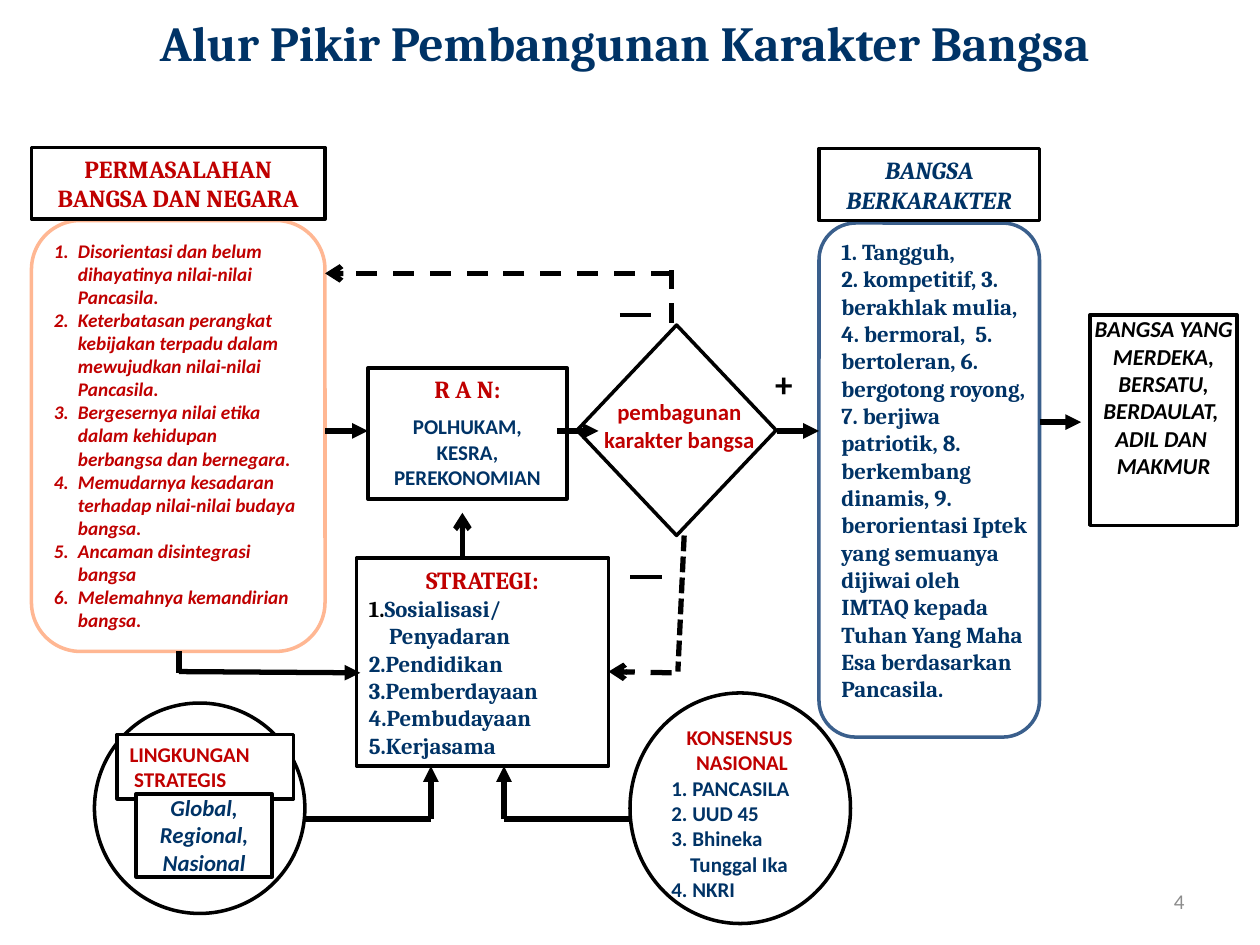
from dataclasses import dataclass, replace

from lxml.etree import SubElement
from pptx import Presentation
from pptx.dml.color import RGBColor
from pptx.enum.dml import MSO_LINE_DASH_STYLE as DASH
from pptx.enum.shapes import MSO_CONNECTOR, MSO_SHAPE as KIND
from pptx.enum.text import MSO_ANCHOR as ANCHOR, PP_ALIGN as ALIGN
from pptx.oxml.ns import qn
from pptx.util import Inches, Pt

NAVY = RGBColor(0x00, 0x33, 0x66)
RED = RGBColor(0xC0, 0x00, 0x00)
BLACK = RGBColor(0x00, 0x00, 0x00)
WHITE = RGBColor(0xFF, 0xFF, 0xFF)
PEACH = RGBColor(0xFF, 0xB7, 0x93)
BLUE = RGBColor(0x3A, 0x5F, 0x8C)
GRAY = RGBColor(0x8C, 0x8C, 0x8C)


@dataclass
class Style:
    """Look of a group of paragraphs."""
    font: str
    size: float
    color: RGBColor
    bold: bool = True
    italic: bool = False
    align: ALIGN = ALIGN.LEFT


HEADING = Style("Cambria", 14, RED, align=ALIGN.CENTER)
TRAITS = Style("Cambria", 13, NAVY)
LABEL = Style("Calibri", 12, RED)
GOAL = Style("Calibri", 13, BLACK, italic=True, align=ALIGN.CENTER)


def format_run(run, style):
    """Apply a style to one run."""
    run.font.name, run.font.size = style.font, Pt(style.size)
    run.font.bold, run.font.italic = style.bold, style.italic
    run.font.color.rgb = style.color


def write(shape, *groups, anchor=ANCHOR.TOP, wrap=True, inset=None):
    """Fill a shape with (style, lines) groups and return the paragraphs."""
    frame = shape.text_frame
    frame.text = "\n".join(line for _, lines in groups for line in lines)
    frame.word_wrap, frame.vertical_anchor = wrap, anchor
    if inset is not None:
        frame.margin_left = frame.margin_right = Inches(inset)
        frame.margin_top = frame.margin_bottom = Inches(inset)
    styles = [style for style, lines in groups for _ in lines]
    for paragraph, style in zip(frame.paragraphs, styles):
        paragraph.alignment = style.align
        for run in paragraph.runs:
            format_run(run, style)
    return frame.paragraphs


def add_outline(slide, box, kind=KIND.RECTANGLE, line=BLACK, fill=WHITE):
    """Add an outlined preset shape."""
    shape = slide.shapes.add_shape(kind, *map(Inches, box))
    shape.shadow.inherit = False
    shape.fill.solid()
    shape.fill.fore_color.rgb = fill
    shape.line.color.rgb, shape.line.width = line, Pt(2)
    return shape


def add_text(slide, box, *groups, **layout):
    """Add a text box holding the given groups."""
    return write(slide.shapes.add_textbox(*map(Inches, box)), *groups, **layout)


def add_line(slide, start, end, head=None, dash=None, width=3):
    """Add a straight black line with an optional arrowhead at its end."""
    line = slide.shapes.add_connector(MSO_CONNECTOR.STRAIGHT, *map(Inches, start + end))
    line.line.color.rgb, line.line.width = BLACK, Pt(width)
    if dash:
        line.line.dash_style = dash
    if head:
        SubElement(line.line._get_or_add_ln(), qn("a:tailEnd"), type=head)
    SubElement(line._element.spPr, qn("a:effectLst"))


def indent(paragraph, left, hanging=0):
    """Indent a paragraph, hanging its first line if asked."""
    properties = paragraph._p.get_or_add_pPr()
    properties.set("marL", str(Inches(left)))
    properties.set("indent", str(-Inches(hanging)))
    return properties


def add_nation(slide, box):
    """Add the traits of a nation with character."""
    x, y, w, h = box
    add_outline(slide, (x, y + 0.59, w, h - 0.59), KIND.ROUNDED_RECTANGLE, BLUE)
    add_text(slide, (x + 0.08, y + 0.53, w - 0.08, 4.04), (TRAITS, [
        "1. Tangguh,",
        "2. kompetitif, 3. berakhlak mulia, 4. bermoral,  5. bertoleran, "
        "6. bergotong royong, 7. berjiwa patriotik, 8. berkembang dinamis, "
        "9. berorientasi Iptek yang semuanya dijiwai oleh  IMTAQ kepada Tuhan "
        "Yang Maha Esa berdasarkan Pancasila."]), anchor=ANCHOR.MIDDLE)
    write(add_outline(slide, (x, y, w, 0.57)),
          (replace(HEADING, color=NAVY, italic=True), ["BANGSA BERKARAKTER"]),
          anchor=ANCHOR.MIDDLE)


def add_problems(slide, box):
    """Add the numbered problems of nation and state."""
    x, y, w, h = box
    add_outline(slide, (x, y + 0.58, w, h - 0.58), KIND.ROUNDED_RECTANGLE, PEACH)
    problems = add_text(
        slide, (x + 0.08, y + 0.57, w - 0.18, h - 0.57),
        (Style("Calibri", 11, RED, italic=True), [
            "Disorientasi dan belum dihayatinya nilai-nilai Pancasila.",
            "Keterbatasan perangkat kebijakan terpadu dalam mewujudkan nilai-nilai Pancasila.",
            "Bergesernya nilai etika dalam kehidupan berbangsa dan bernegara.",
            "Memudarnya kesadaran terhadap nilai-nilai budaya bangsa.",
            "Ancaman disintegrasi bangsa",
            "Melemahnya kemandirian bangsa."]), anchor=ANCHOR.MIDDLE)
    for problem in problems:
        SubElement(indent(problem, 0.19, 0.19), qn("a:buAutoNum"), type="arabicPeriod")
    write(add_outline(slide, (x, y, w, 0.57)), (HEADING, ["PERMASALAHAN BANGSA DAN NEGARA"]))


def add_plan(slide, box):
    """Add the action plan."""
    plan = write(add_outline(slide, box), (HEADING, ["R A N:"]),
                 (replace(LABEL, color=NAVY, align=ALIGN.CENTER),
                  ["POLHUKAM, KESRA, PEREKONOMIAN"]))
    plan[1].space_before = Pt(6)


def add_decision(slide, box):
    """Add the character-building decision and its signs."""
    x, y, w, h = box
    add_outline(slide, box, KIND.FLOWCHART_DECISION)
    add_text(slide, (x + 0.02, y + 0.53, w, 0.76),
             (replace(GOAL, color=RED, italic=False), ["pembagunan karakter bangsa"]))
    add_text(slide, (x + 1.5, y + 0.25, 0.17, 0.44), (Style("Calibri", 20, BLACK), ["+"]))
    for dx, dy in ((0.34, -0.08), (0.42, 2)):
        add_line(slide, (x + dx, y + dy), (x + dx + 0.25, y + dy), width=2.25)


def add_strategy(slide, box):
    """Add the strategy list."""
    strategy = write(add_outline(slide, box), (HEADING, ["STRATEGI:"]), (TRAITS, [
        "1.", "Penyadaran", "2.Pendidikan", "3.Pemberdayaan",
        "4.Pembudayaan", "5.Kerjasama"]), anchor=ANCHOR.MIDDLE)
    strategy[1].runs[0].font.color.rgb = BLACK
    first = strategy[1].add_run()
    first.text = "Sosialisasi/"
    format_run(first, TRAITS)
    indent(strategy[2], 0.16)


def add_consensus(slide, box):
    """Add the national consensus circle."""
    x, y, _, _ = box
    add_outline(slide, box, KIND.OVAL)
    pillars = add_text(slide, (x + 0.23, y + 0.6, 1.36, 1.11), (replace(LABEL, color=NAVY), [
        "1. PANCASILA", "2. UUD 45", "3. Bhineka", "Tunggal Ika", "4. NKRI"]),
        anchor=ANCHOR.MIDDLE)
    indent(pillars[3], 0.15)
    add_text(slide, (x + 0.24, y + 0.2, 1.26, 0.5),
             (replace(LABEL, align=ALIGN.CENTER), ["KONSENSUS", " NASIONAL"]),
             anchor=ANCHOR.MIDDLE, wrap=False)


def add_environment(slide, box):
    """Add the strategic environment circle."""
    x, y, _, _ = box
    add_outline(slide, box, KIND.OVAL)
    write(add_outline(slide, (x + 0.18, y + 0.25, 1.4, 0.51)),
          (LABEL, ["LINGKUNGAN", " STRATEGIS"]), anchor=ANCHOR.MIDDLE)
    write(add_outline(slide, (x + 0.33, y + 0.72, 1.08, 0.66)),
          (replace(GOAL, color=NAVY), ["Global, Regional, Nasional"]), inset=0)


def add_flow(slide):
    """Link the regions with arrows and lines."""
    for start, end in ((2.58, 2.92), (4.42, 4.75), (6.17, 6.5)):
        add_line(slide, (start, 3.42), (end, 3.42), "triangle")
    add_line(slide, (8.25, 3.35), (8.58, 3.35), "triangle")
    add_line(slide, (1.42, 5.17), (1.42, 5.34))
    add_line(slide, (1.42, 5.33), (2.86, 5.34), "triangle")
    for side, entry in ((2.42, 3.42), (5, 4)):
        add_line(slide, (side, 6.5), (entry, 6.5))
        add_line(slide, (entry, 6.5), (entry, 6.08), "triangle")
    add_line(slide, (3.67, 4.42), (3.67, 4.07), "arrow")
    add_line(slide, (5.33, 2.56), (5.33, 2.08), dash=DASH.DASH, width=2.75)
    add_line(slide, (5.33, 2.17), (2.58, 2.17), "arrow", DASH.DASH)
    add_line(slide, (5.43, 4.25), (5.38, 5.33), dash=DASH.SQUARE_DOT)
    add_line(slide, (5.33, 5.34), (4.83, 5.33), "arrow", DASH.DASH)


def main():
    """Build the slide and save it."""
    deck = Presentation()
    deck.slide_width, deck.slide_height = Inches(10), Inches(7.5)
    slide = deck.slides.add_slide(deck.slide_layouts[6])
    add_text(slide, (0, 0.05, 10, 0.57),
             (replace(HEADING, size=28, color=NAVY), ["Alur Pikir Pembangunan Karakter Bangsa "]),
             anchor=ANCHOR.MIDDLE)
    add_environment(slide, (0.75, 5.58, 1.67, 1.67))
    add_consensus(slide, (5, 5.5, 1.75, 1.83))
    add_nation(slide, (6.5, 1.18, 1.75, 4.67))
    write(add_outline(slide, (8.65, 2.5, 1.17, 1.67)),
          (GOAL, ["BANGSA YANG MERDEKA, BERSATU, BERDAULAT, ", "ADIL DAN ", "MAKMUR"]), inset=0)
    add_decision(slide, (4.58, 2.58, 1.58, 1.67))
    add_plan(slide, (2.92, 2.92, 1.58, 1.04))
    add_problems(slide, (0.25, 1.17, 2.33, 4))
    add_strategy(slide, (2.83, 4.43, 2, 1.65))
    add_flow(slide)
    add_text(slide, (7.17, 6.95, 2.33, 0.4),
             (Style("Calibri", 12, GRAY, bold=False, align=ALIGN.RIGHT), ["4"]),
             anchor=ANCHOR.MIDDLE)
    deck.save("out.pptx")


if __name__ == "__main__":
    main()
